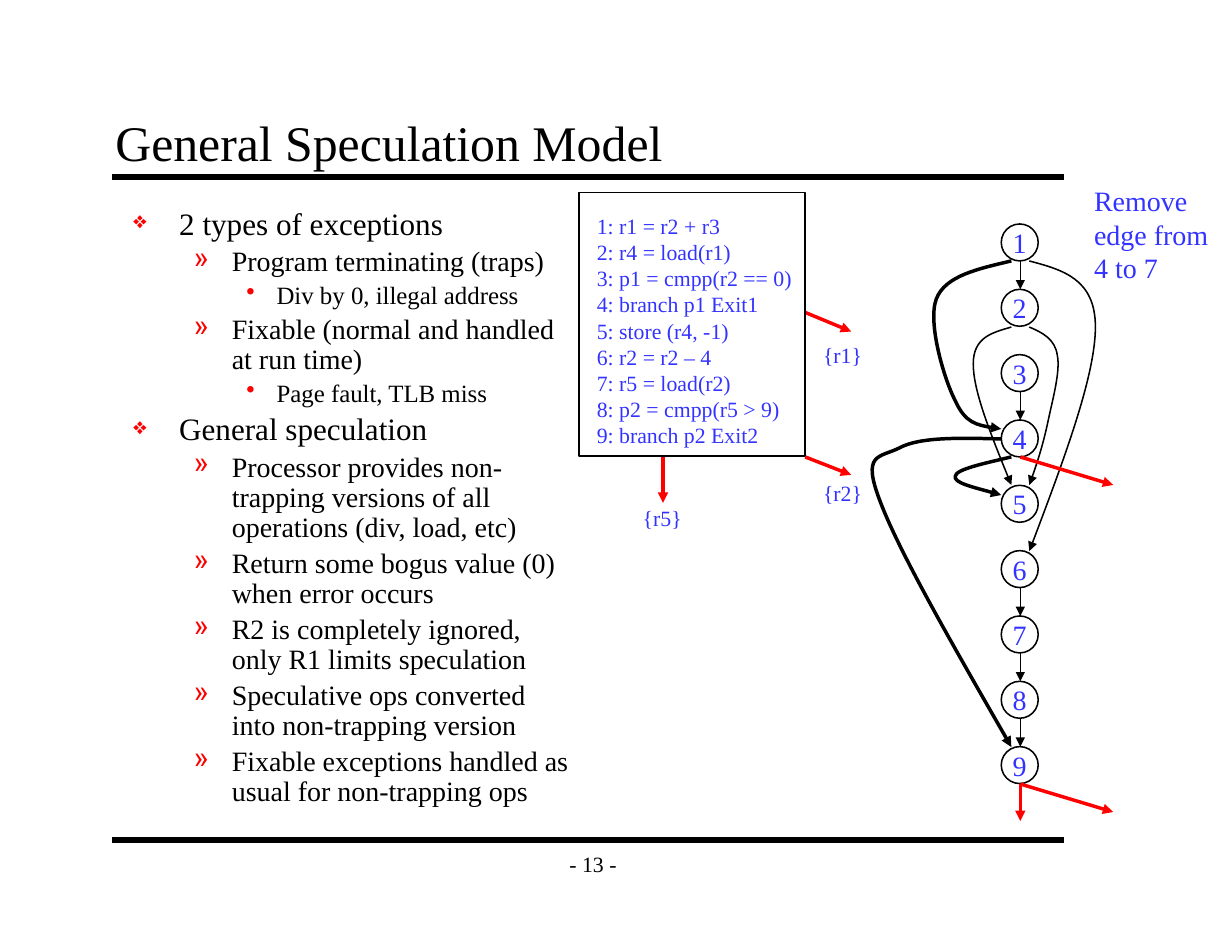
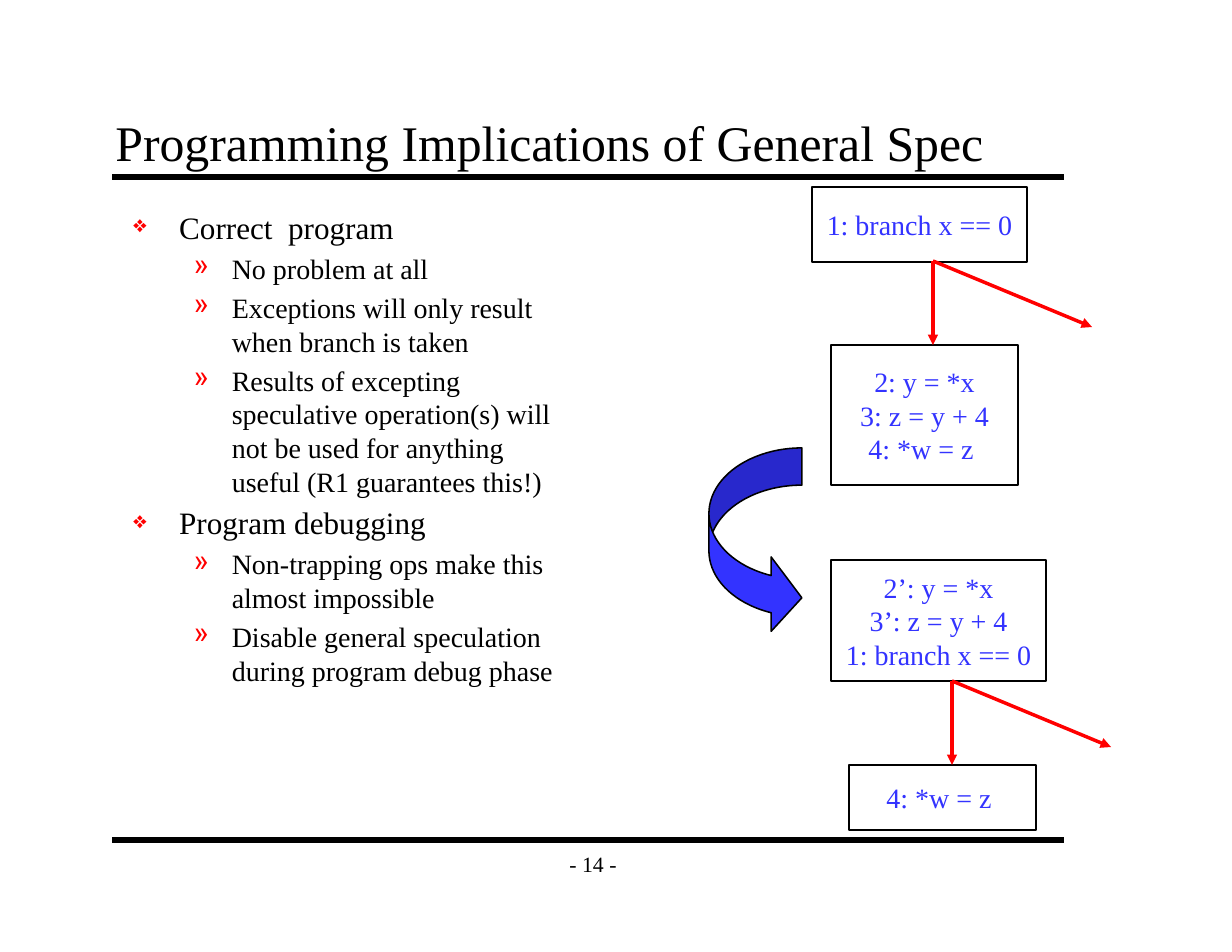
import pptx
import pptx.util
import pptx.dml.color
import pptx.enum.shapes
import pptx.enum.text
import pptx.oxml
import pptx.oxml.ns
from lxml import etree

Inches, Pt = pptx.util.Inches, pptx.util.Pt
RGBColor = pptx.dml.color.RGBColor
SHAPE = pptx.enum.shapes.MSO_SHAPE
ALIGN = pptx.enum.text.PP_ALIGN
ANCHOR = pptx.enum.text.MSO_ANCHOR
AUTO = pptx.enum.text.MSO_AUTO_SIZE
qn = pptx.oxml.ns.qn

BLACK = RGBColor(0, 0, 0)
RED = RGBColor(0xFF, 0, 0)
BLUE = RGBColor(0x33, 0x33, 0xFF)
FONT = "Times New Roman"
WIDE_INSETS = {"margin_left": Inches(0.11), "margin_right": Inches(0.11),
               "margin_top": Inches(0.06), "margin_bottom": Inches(0.06)}
LEVELS = [
    {"size": 20, "left": 0.41, "hang": 0.41, "char": "❖", "scale": 75},
    {"size": 18, "left": 0.88, "hang": 0.34, "char": "»", "scale": 100},
    {"size": 16, "left": 1.28, "hang": 0.27, "char": "•", "scale": 100},
]


class Deck:
    """Holds the shared style and the current slide."""

    def __init__(self):
        self.prs = pptx.Presentation()
        self.prs.slide_width, self.prs.slide_height = Inches(11), Inches(8.5)

    def slide(self, title, number):
        self.s = self.prs.slides.add_slide(self.prs.slide_layouts[5])
        sp = self.s.shapes.title
        box = {"left": 0.92, "top": 0.92, "width": 9.08, "height": 0.67}
        for name, value in box.items():
            setattr(sp, name, Inches(value))
        self.set_text(sp.text_frame, [title], 32, BLACK, ALIGN.LEFT, word_wrap=True,
                      auto_size=AUTO.NONE, vertical_anchor=ANCHOR.BOTTOM, **WIDE_INSETS)
        for y in (1.58, 7.5):
            self.line((1, y), (9.5, y), BLACK, 4, False)
        self.label(4.92, 7.5, 0.75, 0.42, [f"- {number} -"], 14, BLACK, ALIGN.CENTER,
                   vertical_anchor=ANCHOR.MIDDLE, **WIDE_INSETS)

    def add_run(self, p, text, size, color):
        r = p.add_run()
        r.text = text
        for name, value in {"name": FONT, "size": Pt(size)}.items():
            setattr(r.font, name, value)
        r.font.color.rgb = color

    def set_text(self, tf, lines, size, color, align, **frame):
        for name, value in frame.items():
            setattr(tf, name, value)
        for i, line in enumerate(lines):
            p = tf.paragraphs[0] if i == 0 else tf.add_paragraph()
            p.alignment = align
            self.add_run(p, line, size, color)

    def label(self, x, y, w, h, lines, size, color=BLUE, align=ALIGN.LEFT, **frame):
        sp = self.s.shapes.add_textbox(Inches(x), Inches(y), Inches(w), Inches(h))
        frame = {"word_wrap": False, **frame}
        self.set_text(sp.text_frame, lines, size, color, align, **frame)
        return sp

    def bullets(self, items, spacing):
        sp = self.label(1.08, 1.8, 4.12, 5.7, [], 20, word_wrap=True, **WIDE_INSETS)
        tf = sp.text_frame
        for i, (level, text) in enumerate(items):
            style = LEVELS[level]
            p = tf.paragraphs[0] if i == 0 else tf.add_paragraph()
            fmt = {"level": level, "line_spacing": spacing,
                   "space_before": Pt(style["size"] * 0.2)}
            for name, value in fmt.items():
                setattr(p, name, value)
            self.add_run(p, text, style["size"], BLACK)
            pPr = p._p.get_or_add_pPr()
            pPr.set("marL", str(Inches(style["left"])))
            pPr.set("indent", str(-Inches(style["hang"])))
            clr = etree.SubElement(pPr, qn("a:buClr"))
            etree.SubElement(clr, qn("a:srgbClr")).set("val", str(RED))
            etree.SubElement(pPr, qn("a:buSzPct")).set("val", str(style["scale"] * 1000))
            etree.SubElement(pPr, qn("a:buChar")).set("char", style["char"])

    def shape(self, kind, x, y, w, h, lines=(), fill=None):
        sp = self.s.shapes.add_shape(kind, Inches(x), Inches(y), Inches(w), Inches(h))
        self.outline(sp, BLACK, 1)
        if fill is not None:
            sp.fill.solid()
            sp.fill.fore_color.rgb = fill
        self.set_text(sp.text_frame, lines, 18, BLUE, ALIGN.CENTER, word_wrap=False,
                      vertical_anchor=ANCHOR.MIDDLE)
        return sp

    def outline(self, sp, color, width):
        sp.shadow.inherit = False
        sp.fill.background()
        sp.line.color.rgb = color
        sp.line.width = Pt(width)

    def arrowhead(self, sp):
        ln = sp.element.spPr.find(qn("a:ln"))
        etree.SubElement(ln, qn("a:tailEnd")).set("type", "triangle")

    def line(self, start, end, color=RED, width=2.25, arrow=True):
        kind = pptx.enum.shapes.MSO_CONNECTOR.STRAIGHT
        sp = self.s.shapes.add_connector(kind, *[Inches(v) for v in (*start, *end)])
        sp.line.color.rgb = color
        sp.line.width = Pt(width)
        etree.SubElement(sp.element.spPr, qn("a:effectLst"))
        if arrow:
            self.arrowhead(sp)

    def curve(self, points, width):
        points = [(Inches(x), Inches(y)) for x, y in points]
        builder = self.s.shapes.build_freeform(*points[0])
        builder.add_line_segments(points[1:], close=False)
        sp = builder.convert_to_shape()
        self.outline(sp, BLACK, width)
        self.arrowhead(sp)
        steps = list(sp.element.iter(qn("a:lnTo")))
        for i in range(0, len(steps), 3):
            bezier = etree.Element(qn("a:cubicBezTo"))
            steps[i].addprevious(bezier)
            for step in steps[i:i + 3]:
                bezier.append(step[0])
                step.getparent().remove(step)


def speculation_model(deck):
    """Build the dependence graph slide."""
    deck.slide("General Speculation Model", 13)
    deck.bullets([
        (0, "2 types of exceptions"),
        (1, "Program terminating (traps)"),
        (2, "Div by 0, illegal address"),
        (1, "Fixable (normal and handled at run time)"),
        (2, "Page fault, TLB miss"),
        (0, "General speculation"),
        (1, "Processor provides non-trapping versions of all operations (div, load, etc)"),
        (1, "Return some bogus value (0) when error occurs"),
        (1, "R2 is completely ignored, only R1 limits speculation"),
        (1, "Speculative ops converted into non-trapping version"),
        (1, "Fixable exceptions handled as usual for non-trapping ops"),
    ], 0.9)

    size, pitch, center = 0.33, 7 / 12, 9.11
    for i in range(9):
        top = 2 + i * pitch
        deck.shape(SHAPE.OVAL, 8.94, top, size, size, [str(i + 1)])
        if i + 1 in (1, 3, 6, 7, 8):
            deck.line((center, top + size), (center, top + pitch), BLACK, 1)

    thin = [
        [(9.03, 2.92), (8.86, 2.97), (8.69, 3.01), (8.69, 3.25),
         (8.69, 3.49), (8.86, 3.91), (9.03, 4.33)],
        [(9.19, 2.33), (9.49, 2.41), (9.78, 2.49), (9.78, 2.92),
         (9.78, 3.35), (9.49, 4.13), (9.19, 4.92)],
        [(9.19, 2.92), (9.31, 2.97), (9.42, 3.03), (9.44, 3.17), (9.47, 3.31),
         (9.4, 3.56), (9.36, 3.75), (9.32, 3.94), (9.26, 4.14), (9.19, 4.33)],
    ]
    thick = [
        [(9.03, 4.08), (8.78, 4.14), (8.54, 4.19), (8.53, 4.25),
         (8.51, 4.31), (8.73, 4.36), (8.94, 4.42)],
        [(9.03, 2.33), (8.74, 2.4), (8.44, 2.46), (8.36, 2.67), (8.28, 2.88),
         (8.43, 3.39), (8.53, 3.58), (8.62, 3.78), (8.78, 3.81), (8.94, 3.83)],
        [(8.94, 3.92), (8.58, 3.91), (8.21, 3.9), (8.03, 4), (7.85, 4.09),
         (7.69, 4.04), (7.86, 4.48), (8.03, 4.93), (8.53, 5.8), (9.03, 6.67)],
    ]
    for width, curves in ((1, thin), (2.25, thick)):
        for points in curves:
            deck.curve(points, width)
    for start, end in (((center, 4.08), (9.94, 4.33)),
                       ((center, 7), (9.94, 7.25)),
                       ((center, 7), (center, 7.33)),
                       ((7.19, 2.79), (7.6, 2.96)),
                       ((7.19, 4.08), (7.6, 4.24)),
                       ((5.92, 4.08), (5.92, 4.49))):
        deck.line(start, end)

    grow = {"auto_size": AUTO.SHAPE_TO_FIT_TEXT}
    deck.label(9.67, 1.59, 1.22, 1, ["Remove", "edge from", "4 to 7"], 18, **grow)
    deck.label(5.23, 1.85, 1.95, 2.22, [
        "1: r1 = r2 + r3", "2: r4 = load(r1)", "3: p1 = cmpp(r2 == 0)",
        "4: branch p1 Exit1", "5: store (r4, -1)", "6: r2 = r2 – 4",
        "7: r5 = load(r2)", "8: p2 = cmpp(r5 > 9)", "9: branch p2 Exit2"], 14, **grow)
    deck.shape(SHAPE.RECTANGLE, 5.17, 1.72, 2.02, 2.35)
    for x, y, text in ((7.25, 3, "{r1}"), (7.25, 4.23, "{r2}"), (5.64, 4.46, "{r5}")):
        deck.label(x, y, 0.55, 0.34, [text], 14, **grow)


def programming_implications(deck):
    """Build the branch reordering slide."""
    deck.slide("Programming Implications of General Spec", 14)
    deck.bullets([
        (0, "Correct  program"),
        (1, "No problem at all"),
        (1, "Exceptions will only result when branch is taken"),
        (1, "Results of excepting speculative operation(s) will not be used for "
            "anything useful (R1 guarantees this!)"),
        (0, "Program debugging"),
        (1, "Non-trapping ops make this almost impossible"),
        (1, "Disable general speculation during program debug phase"),
    ], 1.0)
    for x, y, w, h, lines in (
            (7.25, 1.67, 1.92, 0.67, ["1: branch x == 0"]),
            (7.42, 3.08, 1.67, 1.25, ["2: y = *x", "3: z = y + 4", "4: *w = z "]),
            (7.42, 5, 1.92, 1.08, ["2’: y = *x", "3’: z = y + 4", "1: branch x == 0"]),
            (7.58, 6.83, 1.67, 0.58, ["4: *w = z "])):
        deck.shape(SHAPE.RECTANGLE, x, y, w, h, lines)
    for x, y in ((8.33, 2.33), (8.5, 6.08)):
        deck.line((x, y), (x + 1.42, y + 0.59))
        deck.line((x, y), (x, y + 0.75))
    sp = deck.shape(SHAPE.CURVED_RIGHT_ARROW, 6.33, 4, 0.83, 1.67, fill=BLUE)
    for i, value in enumerate((0.4, 0.8, 0.33)):
        sp.adjustments[i] = value


deck = Deck()
speculation_model(deck)
programming_implications(deck)
deck.prs.save("out.pptx")
